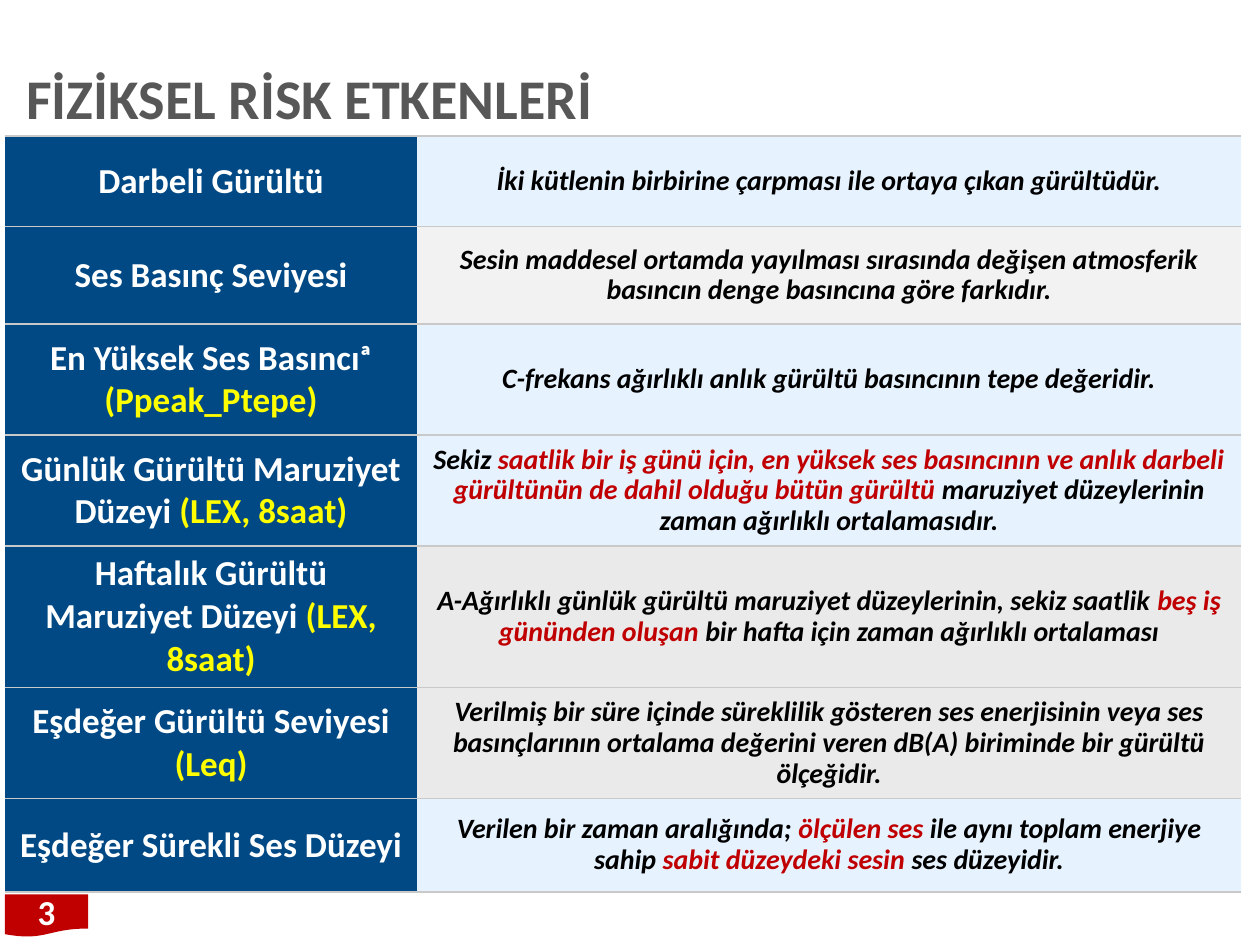
from lxml import etree
from pptx import Presentation
from pptx.dml.color import RGBColor
from pptx.enum.shapes import MSO_SHAPE
from pptx.enum.text import MSO_ANCHOR, PP_ALIGN
from pptx.oxml.ns import qn
from pptx.util import Cm, Pt

DOCUMENT = MSO_SHAPE.FLOWCHART_DOCUMENT
MIDDLE = MSO_ANCHOR.MIDDLE
LEFT, CENTER = PP_ALIGN.LEFT, PP_ALIGN.CENTER

THEME = {
    "font": "Calibri",
    "title": "575757", "white": "FFFFFF", "black": "000000",
    "yellow": "FFFF00", "red": "C00000", "navy": "004985",
    "sky": "BDE1FF", "pale": "F2F2F2", "gray": "EAEAEA", "rule": "C9C9C9",
    "sky_alpha": 37000,
    "title_size": 32, "term_size": 20, "text_size": 16,
}


def write_text(frame, pieces, colors, size, align=CENTER, spacing=1.0, italic=False):
    """Write pieces as runs of one paragraph, alternating between the colors."""
    frame.word_wrap = True
    frame.vertical_anchor = MIDDLE
    para = frame.paragraphs[0]
    para.alignment = align
    para.line_spacing = spacing
    look = {"name": THEME["font"], "size": Pt(THEME[size]), "bold": True, "italic": italic}
    for index, piece in enumerate(pieces):
        span = para.add_run()
        span.text = piece
        for name, value in look.items():
            setattr(span.font, name, value)
        span.font.color.rgb = RGBColor.from_string(THEME[colors[index % len(colors)]])


def style_cell(cell, color):
    """Fill a cell and rule it above and below only."""
    cell.fill.solid()
    cell.fill.fore_color.rgb = RGBColor.from_string(THEME[color])
    properties = cell._tc.get_or_add_tcPr()
    if color == "sky":
        tint = properties.find(".//" + qn("a:srgbClr"))
        etree.SubElement(tint, qn("a:alpha"), val=str(THEME["sky_alpha"]))
    for index, side in enumerate(("lnL", "lnR", "lnT", "lnB")):
        line = etree.Element(qn("a:" + side), w=str(Pt(1)))
        if side in ("lnT", "lnB"):
            paint = etree.SubElement(line, qn("a:solidFill"))
            etree.SubElement(paint, qn("a:srgbClr"), val=THEME["rule"])
        else:
            etree.SubElement(line, qn("a:noFill"))
        properties.insert(index, line)


# Row height, term pieces, definition pieces, definition fill;
# every second piece is highlighted
ROWS = [
    (1.83, ["Darbeli Gürültü"],
     ["İki kütlenin birbirine çarpması ile ortaya çıkan gürültüdür."], "sky"),
    (1.96, ["Ses Basınç Seviyesi"],
     ["Sesin maddesel ortamda yayılması sırasında değişen atmosferik "
      "basıncın denge basıncına göre farkıdır."], "pale"),
    (2.24, ["En Yüksek Ses Basıncıᵃ ", "(Ppeak_Ptepe)"],
     ["C-frekans ağırlıklı anlık gürültü basıncının tepe değeridir."], "sky"),
    (2.24, ["Günlük Gürültü Maruziyet Düzeyi ", "(LEX, 8saat)"],
     ["Sekiz ",
      "saatlik bir iş günü için, en yüksek ses basıncının ve anlık darbeli "
      "gürültünün de dahil olduğu bütün gürültü ",
      "maruziyet düzeylerinin zaman ağırlıklı ortalamasıdır."], "sky"),
    (2.16, ["Haftalık Gürültü Maruziyet Düzeyi ", "(LEX, 8saat)"],
     ["A-Ağırlıklı günlük gürültü maruziyet düzeylerinin, sekiz saatlik ",
      "beş iş gününden oluşan ",
      "bir hafta için zaman ağırlıklı ortalaması"], "gray"),
    (2.24, ["Eşdeğer Gürültü Seviyesi ", "(Leq)"],
     ["Verilmiş bir süre içinde süreklilik gösteren ses enerjisinin veya ses "
      "basınçlarının ortalama değerini veren dB(A) biriminde bir gürültü "
      "ölçeğidir."], "gray"),
    (1.88, ["Eşdeğer Sürekli Ses Düzeyi"],
     ["Verilen bir zaman aralığında; ", "ölçülen ses ",
      "ile aynı toplam enerjiye sahip ", "sabit düzeydeki sesin ",
      "ses düzeyidir."], "sky"),
]
COLUMNS = (8.31, 16.61)

deck = Presentation()
deck.slide_width, deck.slide_height = Cm(25.4), Cm(19.05)
page = deck.slides.add_slide(deck.slide_layouts[6])

# Table of noise terms
height = sum(row[0] for row in ROWS)
table = page.shapes.add_table(len(ROWS), len(COLUMNS), Cm(0.1), Cm(2.74),
                              Cm(sum(COLUMNS)), Cm(height)).table
table.first_row = table.horz_banding = False
for column, width in zip(table.columns, COLUMNS):
    column.width = Cm(width)
for row, (row_height, term, definition, fill) in zip(table.rows, ROWS):
    row.height = Cm(row_height)
    term_cell, definition_cell = row.cells
    style_cell(term_cell, "navy")
    style_cell(definition_cell, fill)
    write_text(term_cell.text_frame, term, ("white", "yellow"), "term_size")
    write_text(definition_cell.text_frame, definition, ("black", "red"), "text_size",
               spacing=0.9, italic=True)
    term_cell.vertical_anchor = definition_cell.vertical_anchor = MIDDLE

# Title
title = page.shapes.add_textbox(Cm(0.53), Cm(1.14), Cm(24.49), Cm(1.8))
title.text_frame.margin_left = title.text_frame.margin_right = 0
write_text(title.text_frame, ["FİZİKSEL RİSK ETKENLERİ"], ("title",), "title_size",
           align=LEFT, spacing=0.9)

# Page number badge
badge = page.shapes.add_shape(DOCUMENT, Cm(0.1), Cm(18.03), Cm(1.68), Cm(0.86))
badge.shadow.inherit = False
badge.fill.solid()
badge.fill.fore_color.rgb = RGBColor.from_string(THEME["red"])
badge.line.fill.background()
for side in ("left", "right", "top", "bottom"):
    setattr(badge.text_frame, "margin_" + side, 0)
write_text(badge.text_frame, ["3"], ("white",), "term_size")

deck.save("out.pptx")
